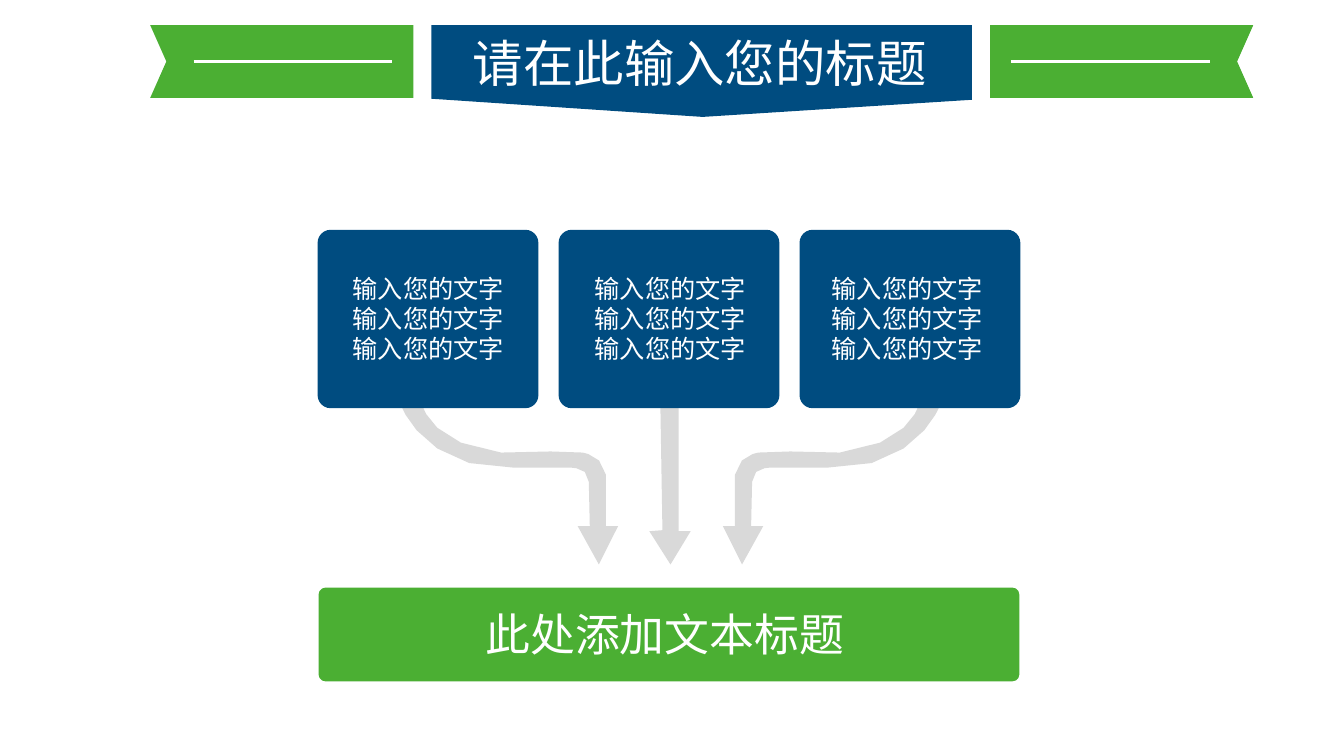
"""Build a slide where three cards flow through arrows into one conclusion bar."""
from dataclasses import dataclass

from lxml.etree import SubElement
from pptx import Presentation
from pptx.dml.color import RGBColor
from pptx.enum.shapes import MSO_CONNECTOR as Connector, MSO_SHAPE as Preset
from pptx.enum.text import MSO_ANCHOR as Anchor, MSO_AUTO_SIZE as AutoSize, PP_ALIGN as Align
from pptx.oxml.ns import qn
from pptx.util import Inches, Pt

Point = tuple[float, float]


@dataclass(frozen=True)
class Theme:
    blue: RGBColor = RGBColor(0x00, 0x4C, 0x80)
    green: RGBColor = RGBColor(0x4B, 0xAF, 0x33)
    grey: RGBColor = RGBColor(0xD9, 0xD9, 0xD9)
    white: RGBColor = RGBColor(0xFF, 0xFF, 0xFF)
    cjk_font: str = "Noto Sans CJK SC"
    latin_font: str = "Calibri"
    title_size: int = 36
    bar_size: int = 32
    card_size: int = 18
    rule_width: float = 1.75


@dataclass(frozen=True)
class Box:
    left: float
    top: float
    width: float
    height: float

    def lengths(self) -> tuple:
        return tuple(Inches(n) for n in (self.left, self.top, self.width, self.height))


@dataclass(frozen=True)
class Card:
    panel: Box
    label: Box
    arrow: list[Point]


def curve(steps: int, *corners: Point) -> list[Point]:
    result = []
    for step in range(1, steps + 1):
        t = step / steps
        weights = ((1 - t) ** 3, 3 * t * (1 - t) ** 2, 3 * t ** 2 * (1 - t), t ** 3)
        result.append(tuple(sum(w * corner[axis] for w, corner in zip(weights, corners))
                            for axis in (0, 1)))
    return result


def mirror(points: list[Point], axis: float) -> list[Point]:
    return [(2 * axis - x, y) for x, y in points]


THEME = Theme()
SLIDE_WIDTH, SLIDE_HEIGHT = 13.33, 7.5
BANNER_AXIS, ARROW_AXIS = 6.96, 6.65
TITLE_BOX = Box(4.59, 0.27, 4.75, 0.71)
BANNER = [(4.28, 0.25), (9.64, 0.25), (9.64, 0.99), (6.97, 1.16), (4.28, 0.98)]
RIBBON = [(4.1, 0.25), (1.49, 0.25), (1.65, 0.61), (1.49, 0.97), (4.1, 0.97)]
RIBBON_RULE = [(1.92, 0.61), (3.89, 0.61)]
STRAIGHT_ARROW = [(6.55, 4.05), (6.57, 5.26), (6.44, 5.27), (6.65, 5.6),
                  (6.85, 5.27), (6.73, 5.27), (6.73, 4.05)]
CURVED_ARROW = [
    (3.99, 4.05),
    *curve(5, (3.99, 4.05), (3.99, 4.05), (4.24, 4.68), (5.1, 4.64)),
    (5.67, 4.64),
    *curve(3, (5.67, 4.64), (5.67, 4.64), (5.85, 4.64), (5.84, 4.78)),
    (5.85, 5.22), (5.73, 5.22), (5.94, 5.6), (6.13, 5.22), (6.01, 5.22), (6.01, 4.71),
    *curve(3, (6.01, 4.71), (5.99, 4.52), (5.78, 4.49), (5.78, 4.49)),
    *curve(2, (5.78, 4.49), (5.61, 4.45), (5.37, 4.5), (4.97, 4.49)),
    *curve(4, (4.97, 4.49), (4.31, 4.42), (4.2, 4.05), (4.2, 4.05)),
]
ARROWS = (CURVED_ARROW, STRAIGHT_ARROW, mirror(CURVED_ARROW, ARROW_AXIS))
CARDS = [Card(Box(3.15 + 2.39 * index, 2.28, 2.19, 1.77), Box(left, 2.66, 1.87, 1), arrow)
         for index, (left, arrow) in enumerate(zip((3.4, 5.8, 8.15), ARROWS))]
CARD_LINES = ["输入您的文字"] * 3
BAR = Box(3.16, 5.83, 6.95, 0.93)
BAR_LABEL = Box(4.7, 5.97, 3.79, 0.64)


def paint(shape, color: RGBColor) -> None:
    shape.shadow.inherit = False
    shape.fill.solid()
    shape.fill.fore_color.rgb = color
    shape.line.fill.background()


def add_outline(shapes, points: list[Point], color: RGBColor) -> None:
    corners = [(Inches(x), Inches(y)) for x, y in points]
    builder = shapes.build_freeform(*corners[0])
    builder.add_line_segments(corners[1:], close=True)
    paint(builder.convert_to_shape(), color)


def add_ribbon(shapes, outline: list[Point], rule_ends: list[Point]) -> None:
    add_outline(shapes, outline, THEME.green)
    ends = [Inches(n) for point in rule_ends for n in point]
    rule = shapes.add_connector(Connector.STRAIGHT, *ends)
    rule.line.color.rgb = THEME.white
    rule.line.width = Pt(THEME.rule_width)
    SubElement(rule.element.spPr, qn("a:effectLst"))


def add_panel(shapes, box: Box, color: RGBColor) -> None:
    panel = shapes.add_shape(Preset.ROUNDED_RECTANGLE, *box.lengths())
    panel.adjustments[0] = 0.073
    paint(panel, color)


def write(shape, lines: list[str], size: int, font: str, align: Align, wrap: bool = True) -> None:
    frame = shape.text_frame
    frame.word_wrap = wrap
    frame.auto_size = AutoSize.SHAPE_TO_FIT_TEXT
    frame.vertical_anchor = Anchor.TOP
    for index, line in enumerate(lines):
        para = frame.add_paragraph() if index else frame.paragraphs[0]
        para.alignment = align
        span = para.add_run()
        span.text = line
        span.font.size = Pt(size)
        span.font.color.rgb = THEME.white
        span.font.name = font
        SubElement(span.font._element, qn("a:ea")).set("typeface", THEME.cjk_font)


def add_label(shapes, box: Box, lines: list[str], size: int, font: str, align: Align) -> None:
    write(shapes.add_textbox(*box.lengths()), lines, size, font, align)


def add_header(shapes) -> None:
    add_outline(shapes, BANNER, THEME.blue)
    add_ribbon(shapes, mirror(RIBBON, BANNER_AXIS), mirror(RIBBON_RULE, BANNER_AXIS))
    title = shapes.title
    title.left, title.top, title.width, title.height = TITLE_BOX.lengths()
    write(title, ["请在此输入您的标题"], THEME.title_size, THEME.cjk_font, Align.LEFT, wrap=False)
    shapes.element.append(title.element)
    add_ribbon(shapes.add_group_shape().shapes, RIBBON, RIBBON_RULE)


def add_flow(shapes) -> None:
    add_panel(shapes, BAR, THEME.green)
    for card in CARDS:
        add_outline(shapes, card.arrow, THEME.grey)
        members = shapes.add_group_shape().shapes
        add_panel(members, card.panel, THEME.blue)
        add_label(members, card.label, CARD_LINES, THEME.card_size, THEME.cjk_font, Align.LEFT)
    add_label(shapes, BAR_LABEL, ["此处添加文本标题"], THEME.bar_size, THEME.latin_font, Align.CENTER)


def main() -> None:
    deck = Presentation()
    deck.slide_width, deck.slide_height = Inches(SLIDE_WIDTH), Inches(SLIDE_HEIGHT)
    page = deck.slides.add_slide(deck.slide_layouts[5])
    add_header(page.shapes)
    add_flow(page.shapes)
    deck.save("out.pptx")


if __name__ == "__main__":
    main()
